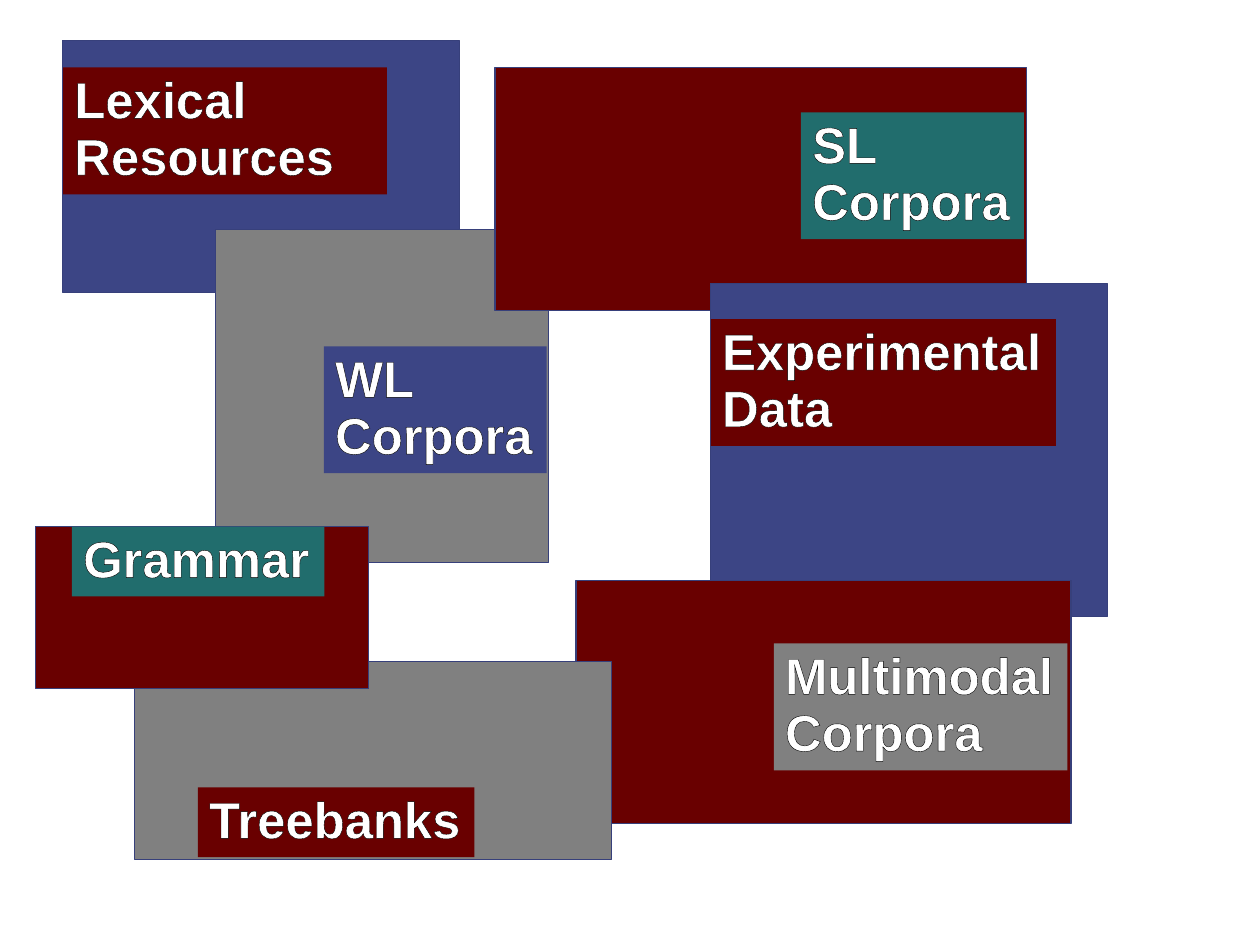
import pptx
import pptx.util
from lxml import etree
from pptx.dml.color import RGBColor
from pptx.enum.shapes import MSO_SHAPE
from pptx.enum.text import MSO_ANCHOR, MSO_AUTO_SIZE, PP_ALIGN
from pptx.oxml.ns import qn

Pt = pptx.util.Pt

BLUE = RGBColor(0x3C, 0x45, 0x85)
GREY = RGBColor(0x80, 0x80, 0x80)
RED = RGBColor(0x69, 0x00, 0x00)
TEAL = RGBColor(0x21, 0x6D, 0x6D)
EDGE = RGBColor(0x37, 0x40, 0x7B)
WHITE = RGBColor(0xFF, 0xFF, 0xFF)
BLACK = RGBColor(0x00, 0x00, 0x00)

# left, top, width, height, fill; back to front
PANELS = [
    (39.6, 25.4, 249.8, 158.7, BLUE),
    (136, 144.6, 209.8, 209.7, GREY),
    (311.8, 42.5, 334.8, 153.1, RED),
    (447.8, 178.6, 249.8, 209.5, BLUE),
    (362.9, 365.8, 311.8, 153.1, RED),
    (85, 416.7, 300.2, 124.6, GREY),
    (22.5, 331.7, 209.8, 102.1, RED),
]

# left, top, width, fill, text, wrap
LABELS = [
    (39.7, 42.5, 204, RED, "Lexical\nResources", True),
    (504.6, 70.8, 140.4, TEAL, "SL\nCorpora", False),
    (204, 218.2, 140.4, BLUE, "WL\nCorpora", False),
    (447.8, 201, 217.4, RED, "Experimental\nData", False),
    (45.3, 331.7, 159.1, TEAL, "Grammar", False),
    (487.5, 405.3, 185, GREY, "Multimodal\nCorpora", False),
    (124.7, 496, 174.2, RED, "Treebanks", False),
]


class Deck:
    font = "Arial"
    size = 32
    line_height = 36
    padding = 7.9

    def __init__(self, width, height):
        self.prs = pptx.Presentation()
        self.prs.slide_width = Pt(width)
        self.prs.slide_height = Pt(height)
        self.s = self.prs.slides.add_slide(self.prs.slide_layouts[6])

    def box(self, left, top, width, height, fill):
        sp = self.s.shapes.add_shape(
            MSO_SHAPE.RECTANGLE, Pt(left), Pt(top), Pt(width), Pt(height))
        sp.shadow.inherit = False
        sp.fill.solid()
        sp.fill.fore_color.rgb = fill
        return sp

    def panel(self, left, top, width, height, fill):
        sp = self.box(left, top, width, height, fill)
        sp.line.color.rgb = EDGE
        sp.line.width = Pt(0.75)

    def label(self, left, top, width, fill, text, wrap):
        lines = text.count("\n") + 1
        height = self.padding + self.line_height * lines
        sp = self.box(left, top, width, height, fill)
        sp.line.fill.background()
        tf = sp.text_frame
        tf.text = text
        tf.word_wrap = wrap
        tf.auto_size = MSO_AUTO_SIZE.SHAPE_TO_FIT_TEXT
        tf.vertical_anchor = MSO_ANCHOR.TOP
        for p in tf.paragraphs:
            p.alignment = PP_ALIGN.LEFT
            p.line_spacing = 0.93
            for r in p.runs:
                r.font.name = self.font
                r.font.size = Pt(self.size)
                r.font.bold = True
                r.font.color.rgb = WHITE
                self.outline(r)

    def outline(self, r):
        """Give the letters of a run a thin black contour."""
        ln = etree.Element(qn("a:ln"), w=str(Pt(1)))
        fill = etree.SubElement(ln, qn("a:solidFill"))
        etree.SubElement(fill, qn("a:srgbClr"), val=str(BLACK))
        r.font._element.insert(0, ln)


def main():
    deck = Deck(793.75, 595.25)
    for panel in PANELS:
        deck.panel(*panel)
    for label in LABELS:
        deck.label(*label)
    deck.prs.save("out.pptx")


if __name__ == "__main__":
    main()
